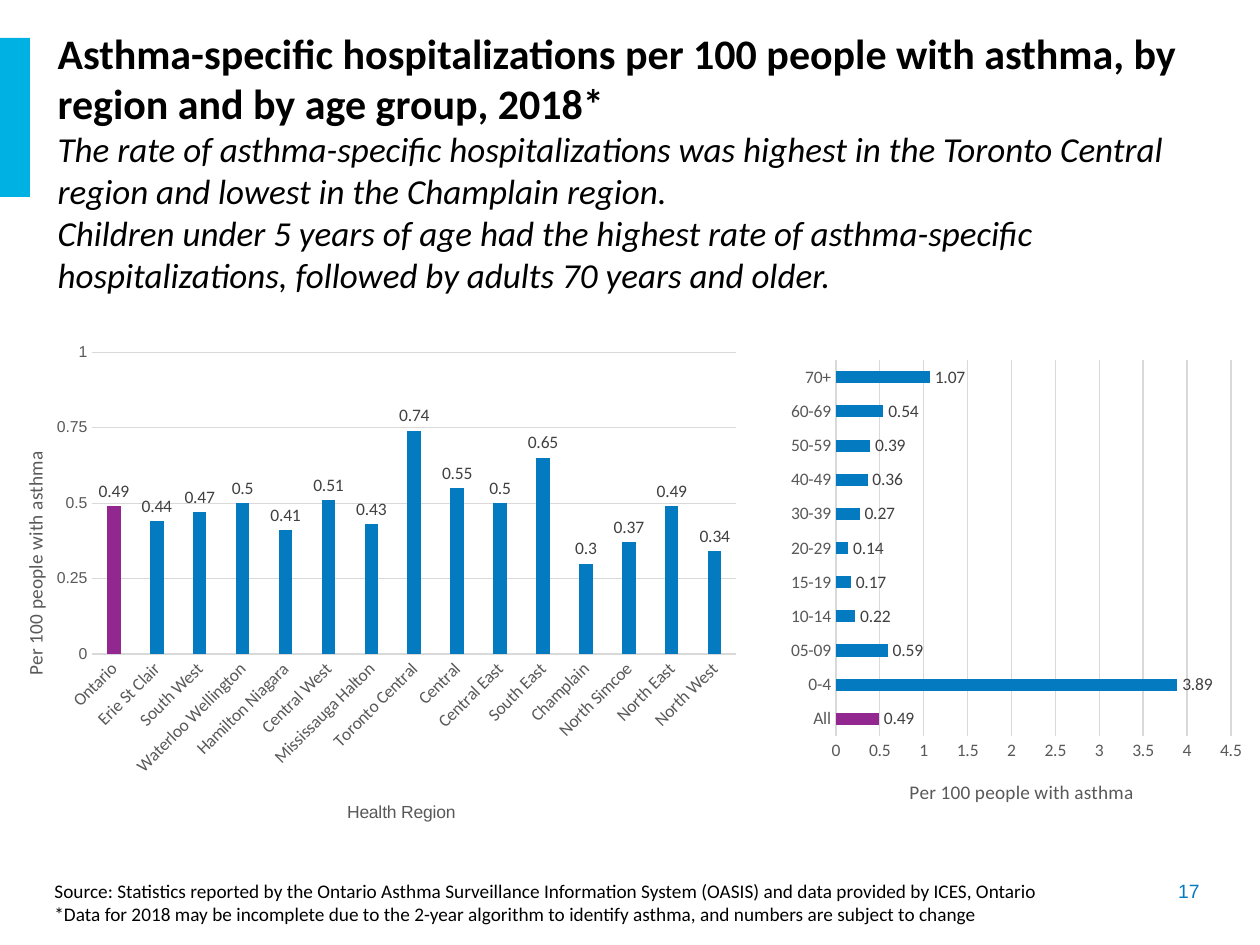
from dataclasses import dataclass

from lxml.etree import SubElement
from pptx import Presentation
from pptx.chart.data import CategoryChartData
from pptx.dml.color import RGBColor
from pptx.enum.chart import XL_CHART_TYPE as ChartType
from pptx.enum.chart import XL_LABEL_POSITION as LabelPosition
from pptx.enum.chart import XL_TICK_MARK as TickMark
from pptx.enum.shapes import MSO_SHAPE as Shape
from pptx.enum.text import MSO_ANCHOR as Anchor
from pptx.enum.text import MSO_AUTO_SIZE as AutoSize
from pptx.enum.text import PP_ALIGN as Align
from pptx.oxml.ns import qn
from pptx.util import Inches, Pt

PX_PER_INCH = 126


@dataclass(frozen=True)
class Theme:
    body_font: str = "Calibri"
    plain_font: str = "Arial"
    text: str = "000000"
    accent: str = "00B2E3"
    bar: str = "047BC1"
    total_bar: str = "92278F"
    axis_text: str = "595959"
    label_text: str = "404040"
    grid: str = "D9D9D9"
    title_size: int = 24
    subtitle_size: int = 20
    note_size: int = 11
    chart_size: int = 10
    small_size: int = 9


THEME = Theme()

REGION_RATES = {
    "Ontario": 0.49, "Erie St Clair": 0.44, "South West": 0.47,
    "Waterloo Wellington": 0.5, "Hamilton Niagara": 0.41,
    "Central West": 0.51, "Mississauga Halton": 0.43,
    "Toronto Central": 0.74, "Central": 0.55, "Central East": 0.5,
    "South East": 0.65, "Champlain": 0.3, "North Simcoe": 0.37,
    "North East": 0.49, "North West": 0.34,
}
AGE_RATES = {
    "All": 0.49, "0-4": 3.89, "05-09": 0.59, "10-14": 0.22, "15-19": 0.17,
    "20-29": 0.14, "30-39": 0.27, "40-49": 0.36, "50-59": 0.39,
    "60-69": 0.54, "70+": 1.07,
}
RATE_TITLE = "Per 100 people with asthma"


def px(length):
    return Inches(length / PX_PER_INCH)


def emu_box(box):
    return [px(length) for length in box]


def set_font(font, size, color, name=THEME.body_font, bold=False, italic=False):
    font.size, font.name = Pt(size), name
    font.bold, font.italic = bold, italic
    font.color.rgb = RGBColor.from_string(color)


def write(frame, text, first=False, align=Align.LEFT, **font_format):
    """Add one paragraph, reusing the frame's empty one when first is true."""
    paragraph = frame.paragraphs[0] if first else frame.add_paragraph()
    paragraph.alignment = align
    run = paragraph.add_run()
    run.text = text
    set_font(run.font, **font_format)


def add_heading(slide, box):
    title = slide.shapes.title
    title.left, title.top, title.width, title.height = emu_box(box)
    frame = title.text_frame
    frame.word_wrap, frame.auto_size = True, AutoSize.NONE
    frame.vertical_anchor = Anchor.MIDDLE
    write(frame, "Asthma-specific hospitalizations per 100 people with asthma, "
          "by region and by age group, 2018*", first=True,
          size=THEME.title_size, color=THEME.text, bold=True)
    for finding in (
        "The rate of asthma-specific hospitalizations was highest in the "
        "Toronto Central region and lowest in the Champlain region.",
        "Children under 5 years of age had the highest rate of asthma-specific "
        "hospitalizations, followed by adults 70 years and older.",
    ):
        write(frame, finding, size=THEME.subtitle_size, color=THEME.text,
              italic=True)


def add_accent_bar(slide, box):
    bar = slide.shapes.add_shape(Shape.RECTANGLE, *emu_box(box))
    bar.shadow.inherit = False
    bar.fill.solid()
    bar.fill.fore_color.rgb = RGBColor.from_string(THEME.accent)
    bar.line.fill.background()


def add_note(slide, box, lines, **text_format):
    frame = slide.shapes.add_textbox(*emu_box(box)).text_frame
    frame.word_wrap = True
    for index, line in enumerate(lines):
        write(frame, line, first=index == 0, size=THEME.note_size, **text_format)


def set_layout(parent, **values):
    """Place a chart part by fractions of the chart's size."""
    layout = parent.find(qn("c:layout"))
    if layout is None:
        layout = SubElement(parent, qn("c:layout"))
        parent.insert(0, layout)
    manual = SubElement(layout, qn("c:manualLayout"))
    for name, value in values.items():
        SubElement(manual, qn(f"c:{name}")).set("val", str(value))


def style_line(line, color):
    line.color.rgb = RGBColor.from_string(color)
    line.width = Pt(0.75)


def add_axis_title(axis, text, x, y, rotation=0, **font_format):
    title = axis.axis_title
    frame = title.text_frame
    write(frame, text, first=True, align=Align.CENTER, color=THEME.axis_text,
          **font_format)
    frame._txBody.bodyPr.set("rot", str(rotation * 60000))
    set_layout(title._element, xMode="edge", yMode="edge", x=x, y=y)


def add_rate_chart(slide, box, chart_type, rates, plot, gap, maximum, step,
                   overlap=0):
    """Add a one-series chart whose first bar, the total, stands out."""
    data = CategoryChartData()
    data.categories = list(rates)
    data.add_series("Rate", list(rates.values()))
    chart = slide.shapes.add_chart(chart_type, *emu_box(box), data).chart
    chart.has_legend = chart.has_title = False
    set_font(chart.font, THEME.chart_size, THEME.text, THEME.plain_font)
    x, y, width, height = plot
    set_layout(chart._chartSpace.chart.plotArea, layoutTarget="inner",
               xMode="edge", yMode="edge", x=x, y=y, w=width, h=height)

    bars = chart.plots[0]
    bars.vary_by_categories = False
    bars.gap_width, bars.overlap = gap, overlap
    series = bars.series[0]
    for part, color in ((series, THEME.bar), (series.points[0], THEME.total_bar)):
        part.format.fill.solid()
        part.format.fill.fore_color.rgb = RGBColor.from_string(color)
    labels = series.data_labels
    labels.show_value = True
    labels.position = LabelPosition.OUTSIDE_END
    set_font(labels.font, THEME.chart_size, THEME.label_text)

    for axis in (chart.category_axis, chart.value_axis):
        axis.major_tick_mark = axis.minor_tick_mark = TickMark.NONE
        set_font(axis.tick_labels.font, THEME.chart_size, THEME.axis_text)
    style_line(chart.category_axis.format.line, THEME.grid)
    values = chart.value_axis
    values.minimum_scale, values.maximum_scale = 0, maximum
    values.major_unit = step
    values.format.line.fill.background()
    style_line(values.major_gridlines.format.line, THEME.grid)
    return chart


def add_region_chart(slide, box):
    chart = add_rate_chart(slide, box, ChartType.COLUMN_CLUSTERED, REGION_RATES,
                           plot=(0.11, 0.04, 0.87, 0.57), gap=219, maximum=1,
                           step=0.25, overlap=-27)
    regions, values = chart.category_axis, chart.value_axis
    regions._element.txPr.bodyPr.set("rot", str(-45 * 60000))
    set_font(values.tick_labels.font, THEME.small_size, THEME.axis_text,
             THEME.plain_font)
    add_axis_title(regions, "Health Region", 0.45, 0.88, size=THEME.chart_size,
                   name=THEME.plain_font)
    add_axis_title(values, RATE_TITLE, 0.01, 0.22, rotation=-90,
                   size=THEME.note_size)


def add_age_chart(slide, box):
    chart = add_rate_chart(slide, box, ChartType.BAR_CLUSTERED, AGE_RATES,
                           plot=(0.17, 0.06, 0.79, 0.77), gap=182, maximum=4.5,
                           step=0.5)
    add_axis_title(chart.value_axis, RATE_TITLE, 0.31, 0.91,
                   size=THEME.note_size)


def main():
    presentation = Presentation()
    presentation.slide_width, presentation.slide_height = px(1260), px(945)
    slide = presentation.slides.add_slide(presentation.slide_layouts[5])
    add_accent_bar(slide, (0, 38, 30, 159))
    add_heading(slide, (45, 35, 1167, 253))
    add_region_chart(slide, (11, 331, 740, 530))
    add_age_chart(slide, (751, 331, 500, 488))
    add_note(slide, (42, 873, 1143, 83), [
        "Source: Statistics reported by the Ontario Asthma Surveillance "
        "Information System (OASIS) and data provided by ICES, Ontario",
        "*Data for 2018 may be incomplete due to the 2-year algorithm to "
        "identify asthma, and numbers are subject to change",
    ], color=THEME.text)
    add_note(slide, (1065, 873, 147, 37), ["17"], color=THEME.bar,
             name=THEME.plain_font, align=Align.RIGHT)
    presentation.save("out.pptx")


if __name__ == "__main__":
    main()
